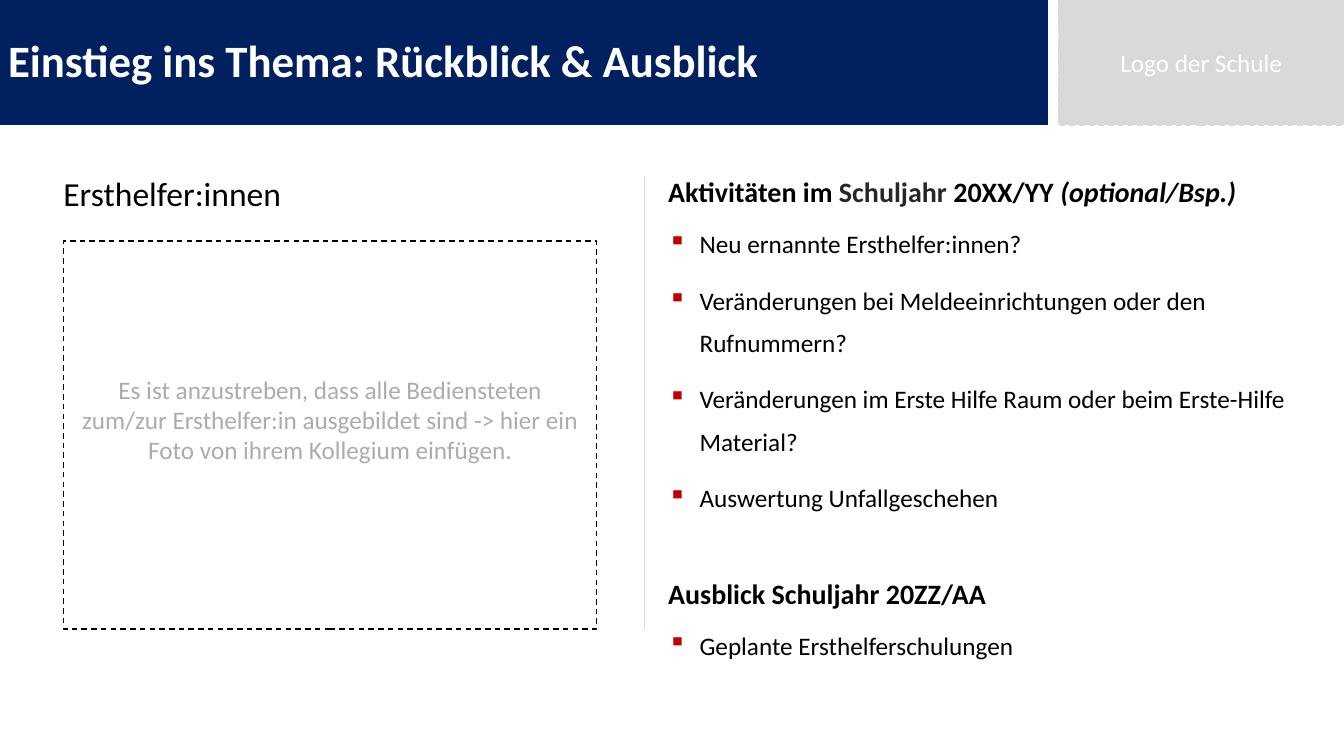
from lxml.etree import SubElement
from pptx import Presentation
from pptx.dml.color import RGBColor
from pptx.enum.dml import MSO_LINE
from pptx.enum.shapes import MSO_CONNECTOR, MSO_SHAPE
from pptx.enum.text import MSO_ANCHOR, MSO_AUTO_SIZE, PP_ALIGN
from pptx.oxml.ns import qn
from pptx.util import Pt

COLORS = {
    "navy": "002060",
    "white": "FFFFFF",
    "black": "000000",
    "charcoal": "262626",
    "light_gray": "D9D9D9",
    "hint_gray": "AFABAB",
    "red": "C00000",
}


def color(name):
    return RGBColor.from_string(COLORS[name])


def add_run(paragraph, text, size, color_name, bold=False, italic=False):
    run = paragraph.add_run()
    run.text = text
    run.font.name = "Calibri"
    run.font.size = Pt(size)
    run.font.bold = bold
    run.font.italic = italic
    run.font.color.rgb = color(color_name)


presentation = Presentation()
presentation.slide_width = Pt(960)
presentation.slide_height = Pt(540)
slide = presentation.slides.add_slide(presentation.slide_layouts[5])

title = slide.shapes.title
title.left, title.top, title.width, title.height = Pt(-1.44), Pt(0), Pt(750), Pt(89.28)
title.fill.solid()
title.fill.fore_color.rgb = color("navy")
title.text_frame.auto_size = MSO_AUTO_SIZE.NONE
title.text_frame.word_wrap = True
title.text_frame.vertical_anchor = MSO_ANCHOR.MIDDLE
paragraph = title.text_frame.paragraphs[0]
paragraph.alignment = PP_ALIGN.LEFT
paragraph.line_spacing = 0.9
add_run(paragraph, "Einstieg ins Thema: Rückblick & Ausblick", 32, "white", bold=True)

photo_hint = (
    "Es ist anzustreben, dass alle Bediensteten zum/zur Ersthelfer:in "
    "ausgebildet sind -> hier ein Foto von ihrem Kollegium einfügen."
)
dashed_boxes = [
    ("Logo der Schule", (756, 0, 204, 89.28), "light_gray", "light_gray", "white", 3.6),
    (photo_hint, (45.36, 172.08, 380.88, 277.2), None, "black", "hint_gray", 25.6),
]
for text, bounds, fill_name, line_name, text_color, bottom_margin in dashed_boxes:
    box = slide.shapes.add_shape(MSO_SHAPE.RECTANGLE, *map(Pt, bounds))
    box.shadow.inherit = False
    if fill_name:
        box.fill.solid()
        box.fill.fore_color.rgb = color(fill_name)
    else:
        box.fill.background()
    box.line.color.rgb = color(line_name)
    box.line.width = Pt(1)
    box.line.dash_style = MSO_LINE.DASH
    box.text_frame.word_wrap = True
    box.text_frame.vertical_anchor = MSO_ANCHOR.MIDDLE
    box.text_frame.margin_bottom = Pt(bottom_margin)
    paragraph = box.text_frame.paragraphs[0]
    paragraph.alignment = PP_ALIGN.CENTER
    add_run(paragraph, text, 18, text_color)

divider = slide.shapes.add_connector(
    MSO_CONNECTOR.STRAIGHT, Pt(460.08), Pt(126), Pt(460.08), Pt(449.28)
)
divider.line.color.rgb = color("light_gray")
divider.line.width = Pt(0.5)
SubElement(divider._element.spPr, qn("a:effectLst"))

heading = slide.shapes.add_textbox(Pt(38.16), Pt(125.28), Pt(418.32), Pt(33.12))
heading.text_frame.word_wrap = True
paragraph = heading.text_frame.paragraphs[0]
paragraph.line_spacing = 0.8
add_run(paragraph, "Ersthelfer:innen", 24, "black")

sections = [
    (
        [
            ("Aktivitäten im", "black", False),
            (" Schuljahr ", "charcoal", False),
            ("20XX/YY ", "black", False),
            ("(optional/Bsp.)", "black", True),
        ],
        [
            "Neu ernannte Ersthelfer:innen?",
            "Veränderungen bei Meldeeinrichtungen oder den Rufnummern?",
            "Veränderungen im Erste Hilfe Raum oder beim Erste-Hilfe Material?",
            "Auswertung Unfallgeschehen",
        ],
    ),
    ([("Ausblick Schuljahr 20ZZ/AA", "black", False)], ["Geplante Ersthelferschulungen"]),
]
activities = slide.shapes.add_textbox(Pt(470.16), Pt(126), Pt(489.6), Pt(414))
activities.text_frame.word_wrap = True
for section_index, (heading_runs, items) in enumerate(sections):
    if section_index == 0:
        paragraph = activities.text_frame.paragraphs[0]
    else:
        paragraph = activities.text_frame.add_paragraph()
        paragraph.space_before = Pt(50)
    paragraph.line_spacing = 0.8
    for text, color_name, italic in heading_runs:
        add_run(paragraph, text, 20, color_name, bold=True, italic=italic)

    for item_index, item in enumerate(items):
        paragraph = activities.text_frame.add_paragraph()
        properties = paragraph._p.get_or_add_pPr()
        properties.set("marL", str(Pt(22.5)))
        properties.set("indent", str(Pt(-22.5)))
        bullet_color = SubElement(properties, qn("a:buClr"))
        SubElement(bullet_color, qn("a:srgbClr"), val=COLORS["red"])
        SubElement(properties, qn("a:buChar"), char="▪")
        paragraph.line_spacing = 1.4
        paragraph.space_before = Pt(10 if item_index else 6)
        add_run(paragraph, item, 18, "black")

presentation.save("out.pptx")
